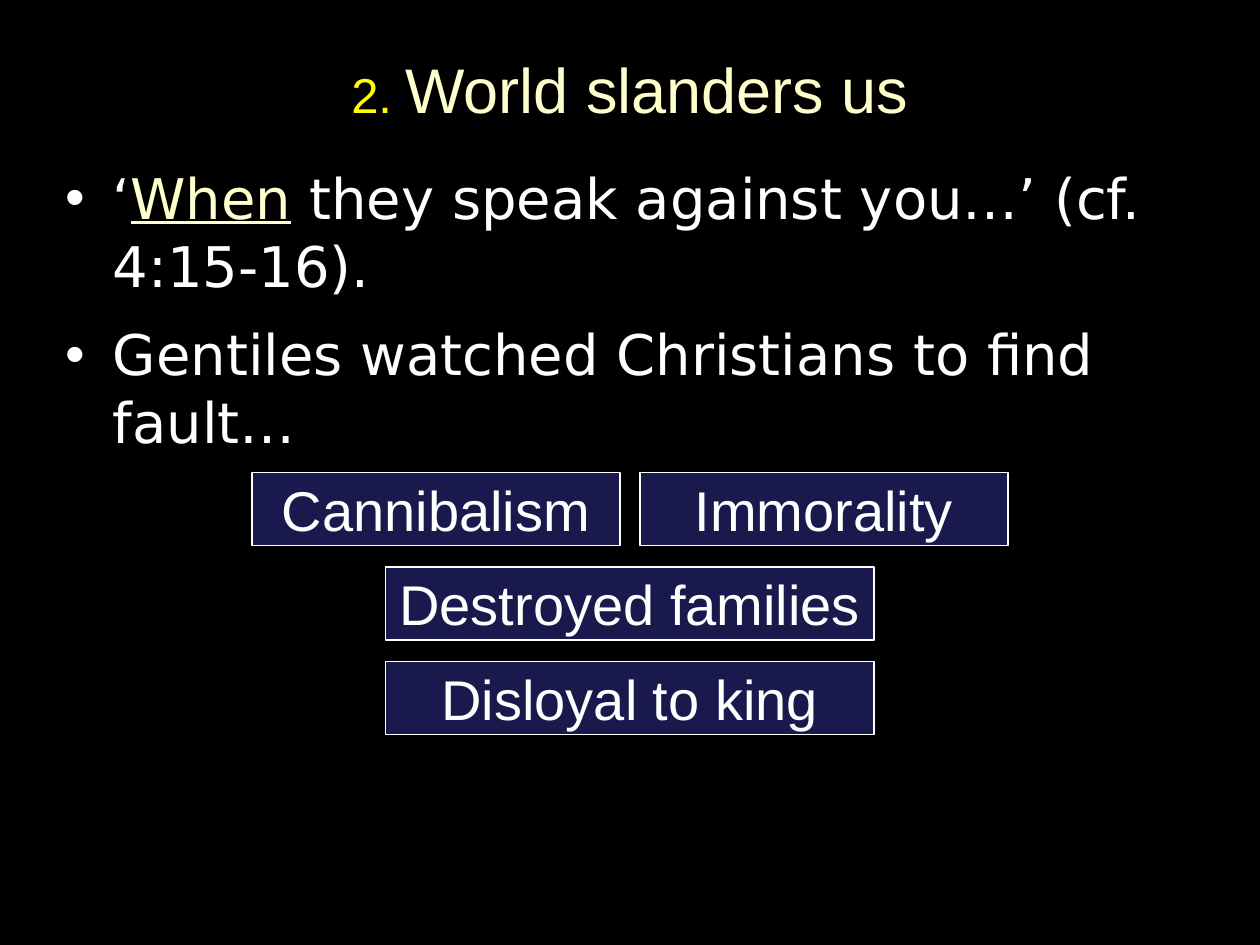
from dataclasses import dataclass

from pptx import Presentation
from pptx import util as u
from pptx.dml.color import RGBColor
from pptx.enum import shapes, text


@dataclass(frozen=True)
class Theme:
    back: str = "000000"
    white: str = "FFFFFF"
    cream: str = "FFFFCC"
    yellow: str = "FFFF00"
    navy: str = "19194D"
    sans: str = "Arial"
    wide: str = "DejaVu Sans"
    head: int = 36
    count: int = 28
    body: int = 32


THEME = Theme()


def color(code):
    return RGBColor.from_string(code)


def style(run, size, face, code, under=None):
    font = run.font
    font.size = u.Pt(size)
    font.name = face
    font.color.rgb = color(code)
    font.underline = under


def add_run(para, words, *look):
    run = para.add_run()
    run.text = words
    style(run, *look)


def place(shape, box):
    shape.left, shape.top, shape.width, shape.height = map(u.Inches, box)


def add_title(slide, box):
    title = slide.shapes.title
    place(title, box)
    frame = title.text_frame
    frame.auto_size = text.MSO_AUTO_SIZE.NONE
    frame.vertical_anchor = text.MSO_ANCHOR.MIDDLE
    para = frame.paragraphs[0]
    para.alignment = text.PP_ALIGN.CENTER
    add_run(para, "2. ", THEME.count, THEME.sans, THEME.yellow)
    add_run(para, "World slanders us", THEME.head, THEME.sans, THEME.cream)


def add_points(slide, box):
    body = slide.placeholders[1]
    place(body, box)
    frame = body.text_frame
    frame.auto_size = text.MSO_AUTO_SIZE.NONE
    points = [
        [("‘", THEME.white, None),
         ("When", THEME.cream, True),
         (" they speak against you…’ (cf. 4:15-16).", THEME.white, None)],
        [("Gentiles watched Christians to find fault…", THEME.white, None)],
    ]
    for i, parts in enumerate(points):
        para = frame.add_paragraph() if i else frame.paragraphs[0]
        para.space_after = u.Pt(6)
        for words, code, under in parts:
            add_run(para, words, THEME.body, THEME.wide, code, under)


def add_label(slide, words, box):
    label = slide.shapes.add_shape(
        shapes.MSO_SHAPE.RECTANGLE, *map(u.Inches, box))
    label.shadow.inherit = False
    label.fill.solid()
    label.fill.fore_color.rgb = color(THEME.navy)
    label.line.color.rgb = color(THEME.white)
    label.line.width = u.Pt(1)
    frame = label.text_frame
    frame.word_wrap = False
    frame.vertical_anchor = text.MSO_ANCHOR.MIDDLE
    frame.text = words
    para = frame.paragraphs[0]
    para.alignment = text.PP_ALIGN.CENTER
    style(para.runs[0], THEME.body, THEME.sans, THEME.white)


def add_claims(slide, box):
    left, top, width, height = box
    rows = [
        (2.92, ["Cannibalism", "Immorality"]),
        (3.88, ["Destroyed families"]),
        (3.88, ["Disloyal to king"]),
    ]
    gap = 0.16
    tall = 0.58
    step = (height - tall) / (len(rows) - 1)
    for i, (wide, names) in enumerate(rows):
        span = len(names) * (wide + gap) - gap
        start = left + (width - span) / 2
        for j, name in enumerate(names):
            spot = (start + j * (wide + gap), top + i * step, wide, tall)
            add_label(slide, name, spot)


def main():
    deck = Presentation()
    deck.slide_width = u.Inches(10)
    deck.slide_height = u.Inches(7.5)
    slide = deck.slides.add_slide(deck.slide_layouts[1])
    fill = slide.background.fill
    fill.solid()
    fill.fore_color.rgb = color(THEME.back)
    add_title(slide, (0.5, 0.08, 9, 1.25))
    add_points(slide, (0.42, 1.25, 9.17, 5.92))
    add_claims(slide, (2, 3.75, 6, 2.08))
    deck.save("out.pptx")


if __name__ == "__main__":
    main()
